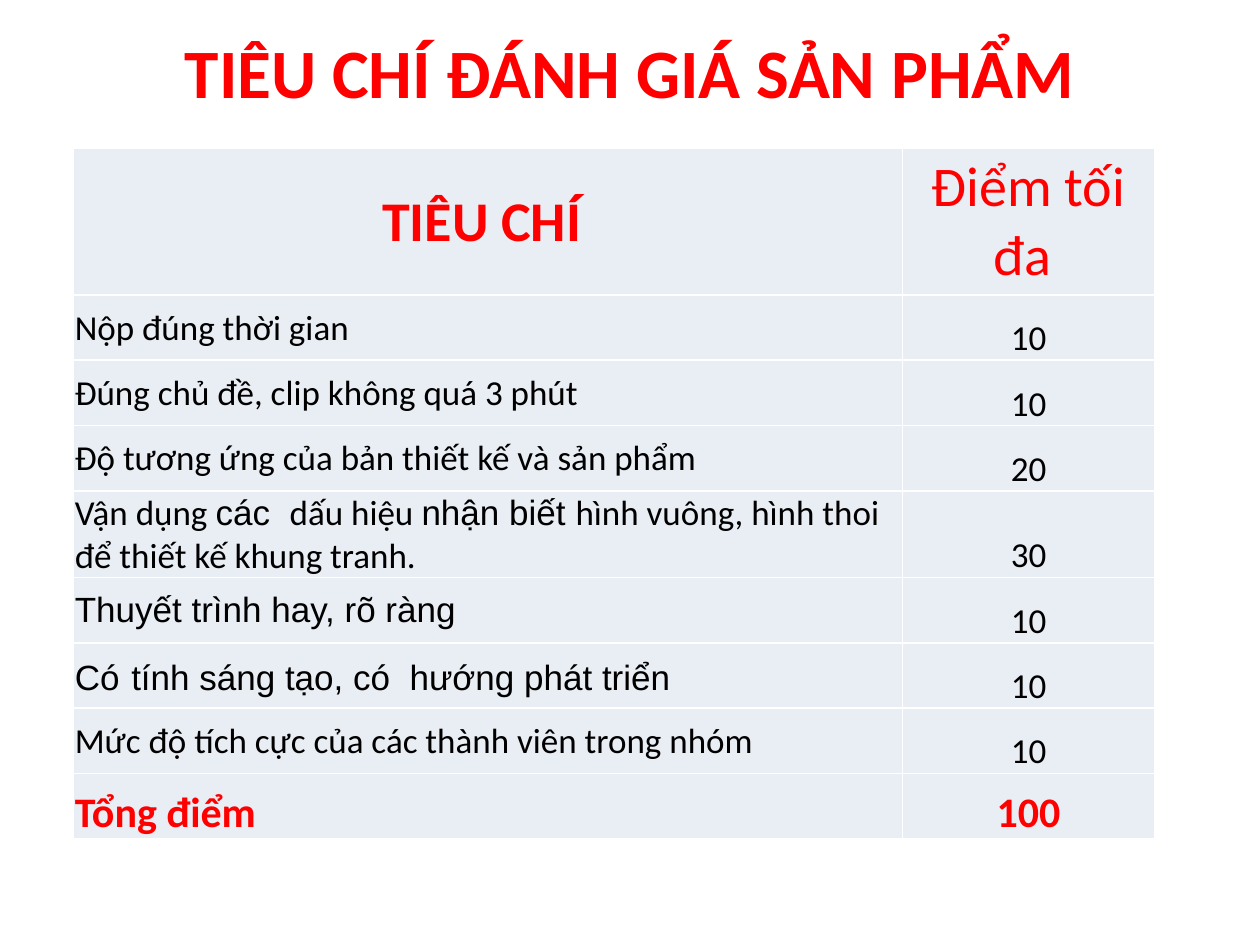
from pptx import Presentation
from pptx.util import Pt
from pptx.dml.color import RGBColor
from pptx.enum.text import MSO_ANCHOR, PP_ALIGN
from pptx.oxml import parse_xml
from pptx.oxml.ns import nsdecls

RED, BLACK, WHITE, PALE = "FF0000", "000000", "FFFFFF", "E9EDF4"
SANS, ARIAL = "Calibri", "Arial"
MID, LOW = MSO_ANCHOR.MIDDLE, MSO_ANCHOR.BOTTOM

ITEMS = [
    ([("Nộp đúng thời gian", SANS, 20)], "10"),
    ([("Đúng chủ đề, clip không quá 3 phút", SANS, 20)], "10"),
    ([("Độ tương ứng của bản thiết kế và sản phẩm", SANS, 20)], "20"),
    ([("Vận dụng ", SANS, 20), ("các  ", ARIAL, 20), ("dấu hiệu ", SANS, 20),
      ("nhận biết ", ARIAL, 20),
      ("hình vuông, hình thoi để thiết kế khung tranh.", SANS, 20)], "30"),
    ([("Thuyết trình hay, rõ ràng", ARIAL, 20)], "10"),
    ([("Có", ARIAL, 20), (" ", ARIAL, 24),
      ("tính sáng tạo, có  hướng phát triển", ARIAL, 20)], "10"),
    ([("Mức độ tích cực của các thành viên trong nhóm", SANS, 20)], "10"),
]


def color(code):
    """Turn a hex string into a colour."""
    return RGBColor.from_string(code)


def write(frame, runs, ink, bold=False, align=PP_ALIGN.CENTER):
    """Add runs of (text, font, size) to the first paragraph."""
    para = frame.paragraphs[0]
    para.alignment = align
    for text, face, size in runs:
        run = para.add_run()
        run.text = text
        font = run.font
        font.name, font.size, font.bold = face, Pt(size), bold
        font.color.rgb = color(ink)


def edge(cell):
    """Draw thin white lines on all four sides of a cell."""
    props = cell._tc.get_or_add_tcPr()
    for side in "LRTB":
        props.append(parse_xml(
            f'<a:ln{side} {nsdecls("a")} w="{Pt(1)}"><a:solidFill>'
            f'<a:srgbClr val="{WHITE}"/></a:solidFill></a:ln{side}>'))


def fill(cell, anchor, *text):
    """Style one cell and write its text."""
    edge(cell)
    cell.fill.solid()
    cell.fill.fore_color.rgb = color(PALE)
    cell.margin_left = cell.margin_right = cell.margin_top = Pt(0.72)
    cell.margin_bottom = Pt(0)
    cell.vertical_anchor = anchor
    write(cell.text_frame, *text)


def title(slide, left, top, width, height):
    """Place the heading in its box."""
    box = slide.shapes.add_textbox(Pt(left), Pt(top), Pt(width), Pt(height))
    frame = box.text_frame
    frame.word_wrap = True
    frame.vertical_anchor = MID
    write(frame, [("TIÊU CHÍ ĐÁNH GIÁ SẢN PHẨM", SANS, 39.6)], RED, True)


def scores(slide, left, top, width, height):
    """Place the table of criteria and points in its box."""
    count = len(ITEMS) + 2
    grid = slide.shapes.add_table(
        count, 2, Pt(left), Pt(top), Pt(width), Pt(height)).table
    grid.first_row = grid.horz_banding = False
    side, head, tall = 144, 84, 49.5
    grid.columns[0].width, grid.columns[1].width = Pt(width - side), Pt(side)
    for row in grid.rows:
        row.height = Pt((height - head - tall) / (count - 2))
    grid.rows[0].height = Pt(head)
    grid.rows[4].height = Pt(tall)

    fill(grid.cell(0, 0), MID, [("TIÊU CHÍ ", SANS, 32)], RED, True)
    fill(grid.cell(0, 1), MID, [("Điểm tối đa ", SANS, 32)], RED)
    for row, (runs, points) in enumerate(ITEMS, 1):
        fill(grid.cell(row, 0), MID, runs, BLACK, False, PP_ALIGN.LEFT)
        fill(grid.cell(row, 1), LOW, [(points, SANS, 20)], BLACK)
    last = count - 1
    fill(grid.cell(last, 0), LOW, [("Tổng điểm", SANS, 24)], RED, True,
         PP_ALIGN.LEFT)
    fill(grid.cell(last, 1), LOW, [("100", SANS, 24)], RED, True)


def main():
    """Build the slide and save it."""
    deck = Presentation()
    deck.slide_width, deck.slide_height = Pt(720), Pt(540)
    slide = deck.slides.add_slide(deck.slide_layouts[6])
    title(slide, 36, 21.6, 648, 38.16)
    scores(slide, 42, 84.5, 617.76, 395)
    deck.save("out.pptx")


if __name__ == "__main__":
    main()
